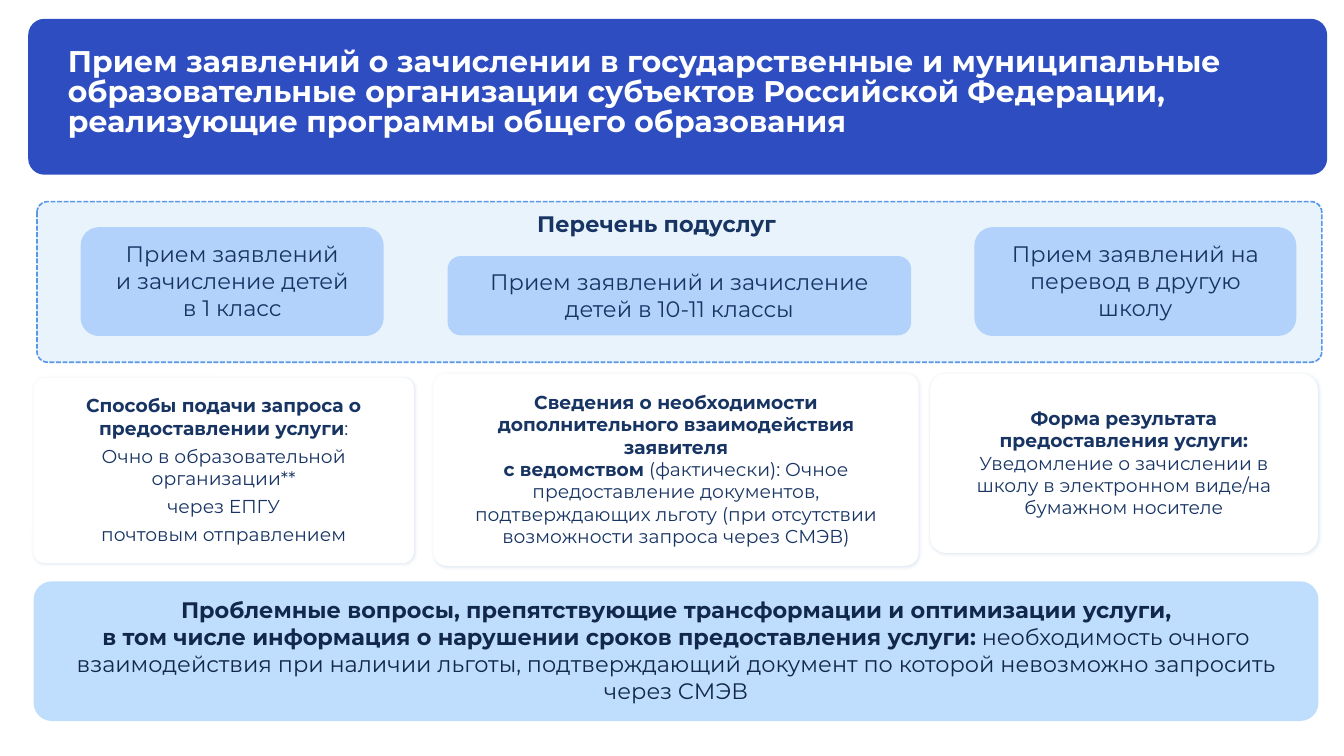
from dataclasses import dataclass

from lxml import etree
from pptx import Presentation
from pptx.dml.color import RGBColor
from pptx.enum.dml import MSO_LINE_DASH_STYLE as Dash
from pptx.enum.shapes import MSO_SHAPE as Shape
from pptx.enum.text import MSO_ANCHOR as Anchor, PP_ALIGN as Align
from pptx.oxml import parse_xml
from pptx.oxml.ns import nsdecls, qn
from pptx.util import Inches, Pt

FONT = "Montserrat"
WHITE, NAVY, INK = "FFFFFF", "173463", "11274B"
ROYAL, SKY, PALE, CHIP = "2D4DC1", "BFDDFD", "E9F3FB", "B2D2FC"
DASH_BLUE, SHADE = "5997E9", "6D92BF"


@dataclass
class Line:
    """One paragraph: a bold lead followed by a regular rest."""
    bold: str = ""
    plain: str = ""


@dataclass
class Panel:
    left: float
    top: float
    width: float
    height: float
    fill: str
    lines: tuple[Line, ...] = ()
    size: int = 24
    color: str = NAVY
    corner: float = 0.167
    insets: tuple[float, ...] = (0.24, 0.12, 0.24, 0.14)
    shaded: bool = False
    align: Align = Align.CENTER


def rgb(value: str) -> RGBColor:
    return RGBColor.from_string(value)


def write_lines(frame, lines: tuple[Line, ...], size: int, color: str, align: Align) -> None:
    for index, line in enumerate(lines):
        para = frame.paragraphs[0] if index == 0 else frame.add_paragraph()
        para.alignment = align
        if index:
            para.space_before = Pt(6)
        para.text = line.bold or line.plain
        for span in para.runs:
            span.font.bold = bool(line.bold)
        if line.bold and line.plain:
            span = para.add_run()
            span.text = line.plain
            span.font.bold = False
        for span in para.runs:
            span.font.name = FONT
            span.font.size = Pt(size)
            span.font.color.rgb = rgb(color)


def set_insets(frame, insets: tuple[float, ...]) -> None:
    frame.word_wrap = True
    (frame.margin_left, frame.margin_top,
     frame.margin_right, frame.margin_bottom) = map(Inches, insets)


def add_soft_shadow(shape) -> None:
    effects = shape._element.spPr.find(qn("a:effectLst"))
    shadow = parse_xml(
        f'<a:outerShdw {nsdecls("a")} blurRad="{Pt(4)}" dist="{Pt(1)}" dir="2700000" '
        'algn="tl" rotWithShape="0"/>')
    tint = etree.SubElement(shadow, qn("a:srgbClr"), val=SHADE)
    etree.SubElement(tint, qn("a:alpha"), val="20000")
    effects.append(shadow)


def add_panel(page, panel: Panel):
    box = page.shapes.add_shape(
        Shape.ROUNDED_RECTANGLE, Inches(panel.left), Inches(panel.top),
        Inches(panel.width), Inches(panel.height))
    box.adjustments[0] = panel.corner
    box.fill.solid()
    box.fill.fore_color.rgb = rgb(panel.fill)
    box.line.fill.background()
    box.shadow.inherit = False
    if panel.shaded:
        add_soft_shadow(box)
    frame = box.text_frame
    frame.vertical_anchor = Anchor.MIDDLE
    set_insets(frame, panel.insets)
    write_lines(frame, panel.lines, panel.size, panel.color, panel.align)
    return box


def add_chip(page, left: float, top: float, width: float, height: float, text: str) -> None:
    add_panel(page, Panel(left, top, width, height, CHIP, (Line(plain=text),)))


def add_card(page, left: float, top: float, width: float, height: float,
             corner: float, *lines: Line) -> None:
    add_panel(page, Panel(left, top, width, height, WHITE, lines, size=20,
                          corner=corner, shaded=True))


def main() -> None:
    deck = Presentation()
    deck.slide_width, deck.slide_height = Inches(20), Inches(11.25)
    page = deck.slides.add_slide(deck.slide_layouts[6])

    # Title banner
    banner = add_panel(page, Panel(
        0.42, 0.28, 19.33, 2.32, ROYAL,
        (Line("Прием заявлений о зачислении в государственные и муниципальные "
              "образовательные организации субъектов Российской Федерации, "
              "реализующие программы общего образования"),),
        size=32, color=WHITE, corner=0.104, insets=(0.52, 0.37, 0.68, 0.47),
        align=Align.LEFT))
    banner.text_frame.paragraphs[0].line_spacing = Pt(32)

    # Problem statement
    add_panel(page, Panel(
        0.5, 8.65, 19.12, 2.08, SKY,
        (Line("Проблемные вопросы, препятствующие трансформации и оптимизации услуги,\n"
              "в том числе информация о нарушении сроков предоставления услуги:",
              " необходимость очного взаимодействия при наличии льготы, "
              "подтверждающий документ по которой невозможно запросить через СМЭВ"),),
        color=INK, corner=0.131, insets=(0.24, 0.14, 0.24, 0.18)))

    # Dashed frame with its heading
    outline = add_panel(page, Panel(0.55, 3, 19.12, 2.39, PALE, corner=0.067)).line
    outline.color.rgb = rgb(DASH_BLUE)
    outline.width = Pt(1.75)
    outline.dash_style = Dash.SQUARE_DOT
    heading = page.shapes.add_textbox(Inches(3.51), Inches(3.13), Inches(12.52), Inches(0.55))
    set_insets(heading.text_frame, (0, 0, 0, 0))
    write_lines(heading.text_frame, (Line("Перечень подуслуг"),), 24, NAVY, Align.CENTER)

    # Subservices
    add_chip(page, 1.2, 3.38, 4.51, 1.62, "Прием заявлений\nи зачисление детей\nв 1 класс")
    add_chip(page, 6.66, 3.81, 6.9, 1.18, "Прием заявлений и зачисление детей в 10-11 классы")
    add_chip(page, 14.5, 3.38, 4.79, 1.62, "Прием заявлений на перевод в другую школу")

    # Detail cards
    add_card(page, 0.5, 5.62, 5.66, 2.76, 0.062,
             Line("Способы подачи запроса о предоставлении услуги", ":"),
             Line(plain="Очно в образовательной организации**"),
             Line(plain="через ЕПГУ"),
             Line(plain="почтовым отправлением"))
    add_card(page, 6.45, 5.56, 7.22, 2.86, 0.069,
             Line("Сведения о необходимости дополнительного взаимодействия заявителя\n"
                  "с ведомством",
                  " (фактически): Очное предоставление документов, подтверждающих "
                  "льготу (при отсутствии возможности запроса через СМЭВ)"))
    add_card(page, 13.84, 5.56, 5.77, 2.67, 0.092,
             Line("Форма результата предоставления услуги: ",
                  "Уведомление о зачислении в школу в электронном виде/на "
                  "бумажном носителе"))

    deck.save("out.pptx")


if __name__ == "__main__":
    main()
